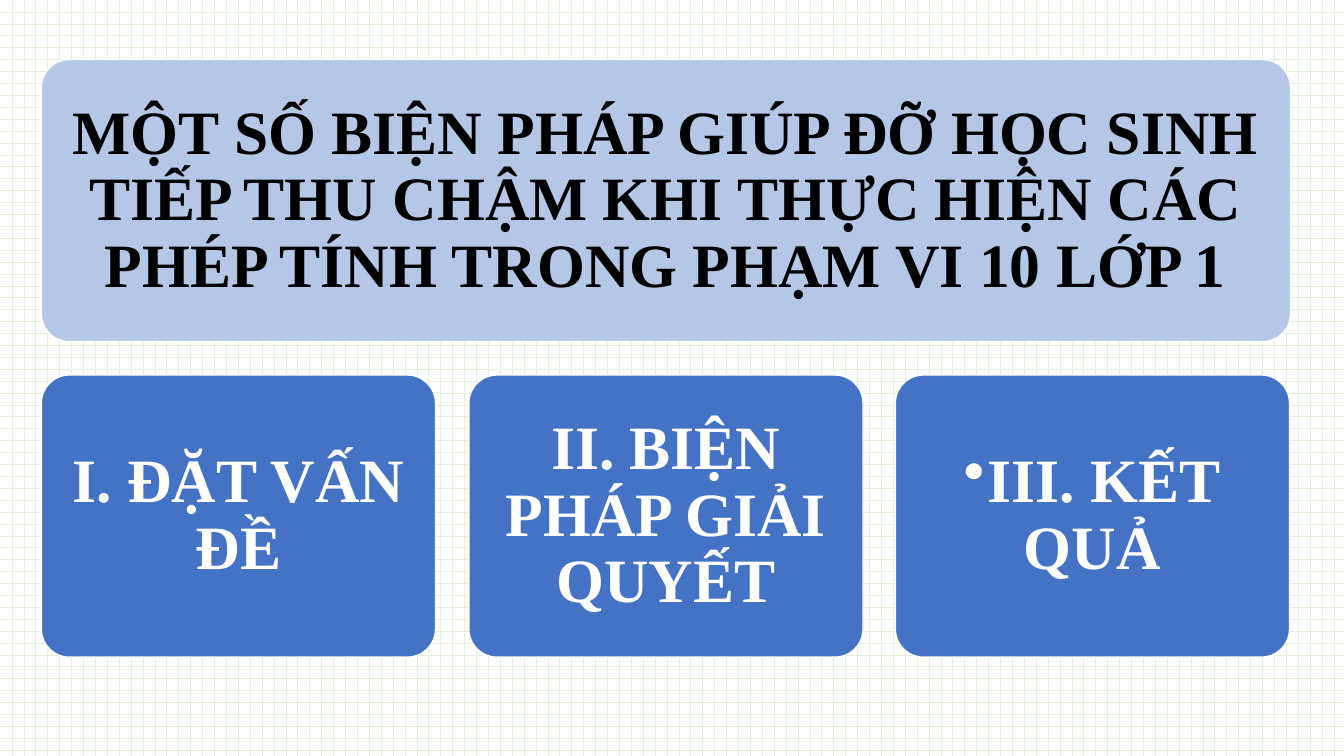
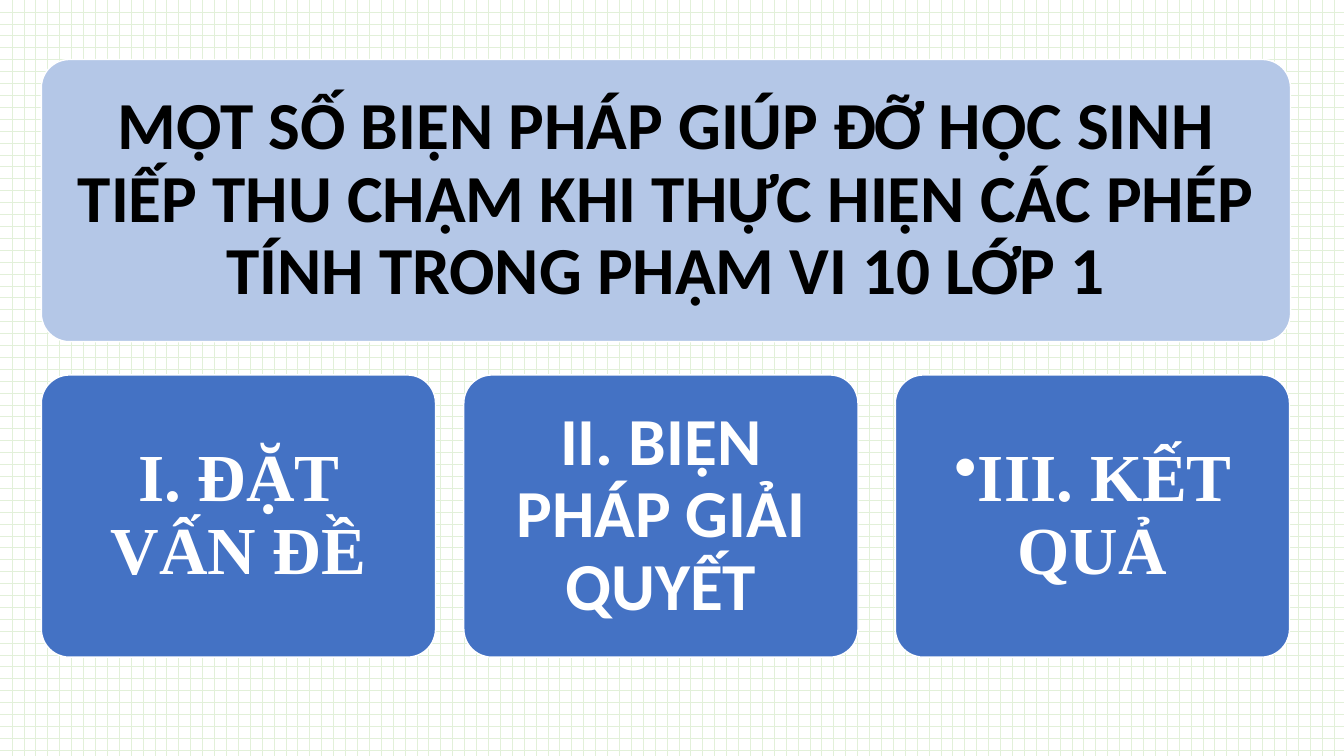
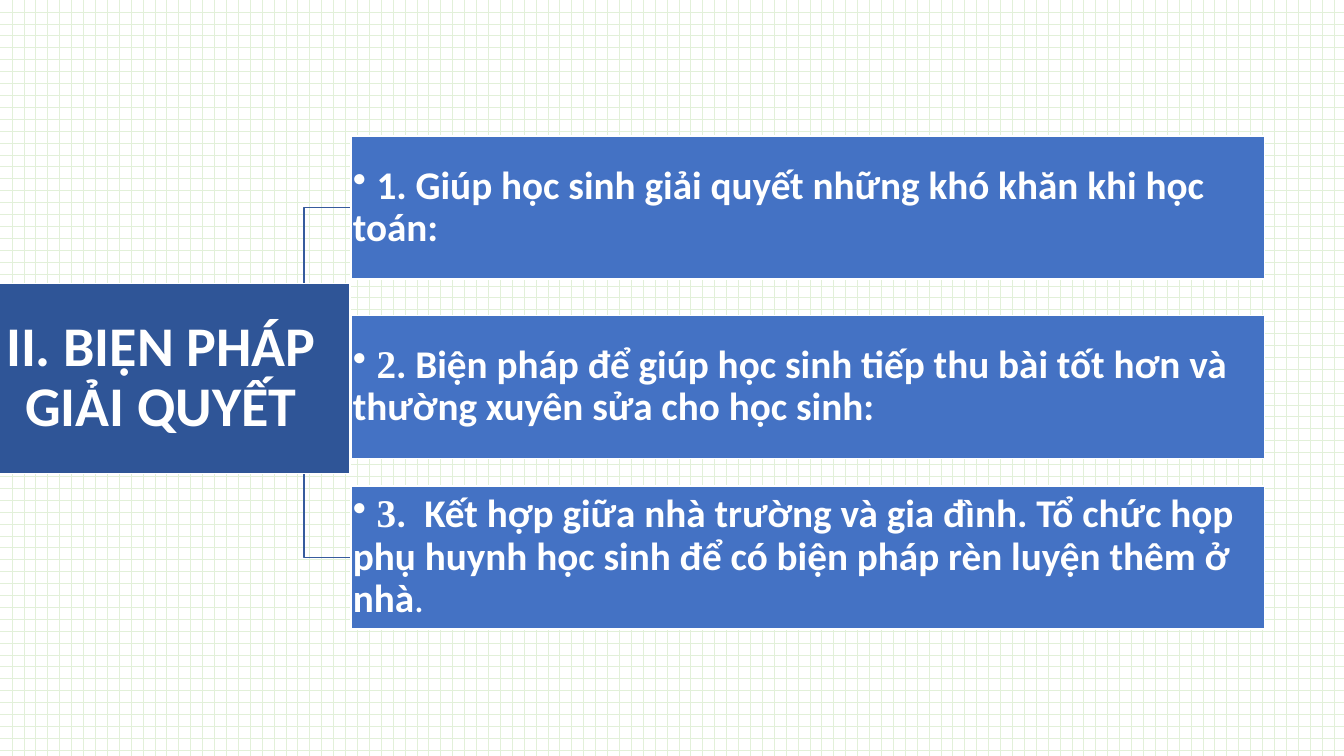
from dataclasses import dataclass, field

from lxml.etree import SubElement
from pptx import Presentation
from pptx.dml.color import RGBColor
from pptx.enum.dml import MSO_PATTERN
from pptx.enum.shapes import MSO_CONNECTOR, MSO_SHAPE
from pptx.enum.text import MSO_ANCHOR, PP_ALIGN
from pptx.oxml.ns import qn
from pptx.slide import Slide
from pptx.util import Emu, Pt

EMU_PER_PX = 9144  # 100 px to the inch


@dataclass(frozen=True)
class Theme:
    white: str = "FFFFFF"
    black: str = "000000"
    grid: str = "E2F0D9"
    pale: str = "B4C7E7"
    blue: str = "4472C4"
    navy: str = "2F5597"
    link: str = "365B9D"
    serif: str = "Times New Roman"
    sans: str = "Calibri"
    menu_size: int = 44
    menu_large: int = 48
    root_size: int = 40
    row_size: int = 28
    line_spacing: float = 0.9
    space_after: int = 35000  # thousandths of a percent


T = Theme()


@dataclass(frozen=True)
class Run:
    text: str
    font: str = T.sans
    bold: bool = True


@dataclass(frozen=True)
class Card:
    x: int
    y: int
    w: int
    h: int
    runs: list[Run]
    size: int
    inset: int
    fill: str = T.blue
    ink: str = T.white
    bullet: bool = False
    rounded: bool = True
    align: PP_ALIGN = PP_ALIGN.CENTER


@dataclass(frozen=True)
class Menu:
    size: int
    inset: int
    middle_x: int
    fonts: list[str] = field(default_factory=list)  # title, then the three parts


def px(n: int) -> Emu:
    return Emu(n * EMU_PER_PX)


def rgb(value: str) -> RGBColor:
    return RGBColor.from_string(value)


def set_all(obj: object, values: dict[str, object]) -> None:
    for name, value in values.items():
        setattr(obj, name, value)


def draw_card(s: Slide, c: Card) -> None:
    kind = MSO_SHAPE.ROUNDED_RECTANGLE if c.rounded else MSO_SHAPE.RECTANGLE
    sp = s.shapes.add_shape(kind, px(c.x), px(c.y), px(c.w), px(c.h))
    if c.rounded:
        sp.adjustments[0] = 0.1
    sp.shadow.inherit = False
    sp.fill.solid()
    sp.fill.fore_color.rgb = rgb(c.fill)
    sp.line.color.rgb = rgb(T.white)
    sp.line.width = Pt(1)

    tf = sp.text_frame
    margins = {f"margin_{side}": px(c.inset) for side in ("left", "top", "right", "bottom")}
    set_all(tf, {"word_wrap": True, "vertical_anchor": MSO_ANCHOR.MIDDLE, **margins})

    # Relative spacing and bullets have no public method
    p = tf.paragraphs[0]
    pPr = p._p.get_or_add_pPr()
    after = SubElement(pPr, qn("a:spcAft"))
    SubElement(after, qn("a:spcPct"), val=str(T.space_after))
    if c.bullet:
        SubElement(pPr, qn("a:buChar"), char="•")
    set_all(p, {"alignment": c.align, "line_spacing": T.line_spacing})

    for run in c.runs:
        r = p.add_run()
        r.text = run.text
        set_all(r.font, {"name": run.font, "size": Pt(c.size), "bold": run.bold})
        r.font.color.rgb = rgb(c.ink)


def draw_link(s: Slide, x1: int, y1: int, x2: int, y2: int) -> None:
    cx = s.shapes.add_connector(MSO_CONNECTOR.ELBOW, px(x1), px(y1), px(x2), px(y2))
    cx.line.color.rgb = rgb(T.link)
    cx.line.width = Pt(1)
    SubElement(cx._element.spPr, qn("a:effectLst"))


# Contents
TITLE = ("MỘT SỐ BIỆN PHÁP GIÚP ĐỠ HỌC SINH TIẾP THU CHẬM "
         "KHI THỰC HIỆN CÁC PHÉP TÍNH TRONG PHẠM VI 10 LỚP 1")
SOLUTIONS = "II. BIỆN PHÁP GIẢI QUYẾT"
PARTS = ["I. ĐẶT VẤN ĐỀ", SOLUTIONS, "III. KẾT QUẢ"]
MENUS = [
    Menu(T.menu_size, 18, 465, [T.serif] * 4),
    Menu(T.menu_large, 20, 460, [T.sans, T.serif, T.sans, T.serif]),
]
MEASURES: list[tuple[int, list[Run]]] = [  # top of the row, text
    (135, [Run(" ", T.serif),
           Run("1. Giúp học sinh giải quyết những khó khăn khi học toán:")]),
    (313, [Run(" 2", T.serif),
           Run(". Biện pháp để giúp học sinh tiếp thu bài tốt hơn và "
               "thường xuyên sửa cho học sinh:")]),
    (482, [Run(" 3", T.serif),
           Run(".  Kết hợp giữa nhà trường và gia đình. Tổ chức họp phụ huynh "
               "học sinh để có biện pháp rèn luyện thêm ở nhà"),
           Run(".", bold=False)]),
]


def draw_menu(s: Slide, m: Menu) -> None:
    title_font, *part_fonts = m.fonts
    draw_card(s, Card(41, 59, 1239, 280, [Run(TITLE, title_font)], m.size, m.inset,
                      fill=T.pale, ink=T.black))
    for x, text, font in zip((41, m.middle_x, 888), PARTS, part_fonts):
        draw_card(s, Card(x, 372, 391, 280, [Run(text, font)], m.size, m.inset,
                          bullet=text == PARTS[-1]))


def draw_measures(s: Slide) -> None:
    row_x, row_h = 348, 142
    # Links go behind the boxes
    for y, _ in MEASURES:
        draw_link(s, 255, 375, row_x, y + row_h // 2)
    draw_card(s, Card(-28, 281, 375, 189, [Run(SOLUTIONS)], T.root_size, 3,
                      fill=T.navy, rounded=False))
    for y, runs in MEASURES:
        draw_card(s, Card(row_x, y, 906, row_h, runs, T.row_size, 2,
                          bullet=True, rounded=False, align=PP_ALIGN.LEFT))


def main() -> None:
    prs = Presentation()
    set_all(prs, {"slide_width": px(1333), "slide_height": px(750)})
    blank = prs.slide_layouts[6]

    # Shared grid background
    fill = prs.slide_master.background.fill
    fill.patterned()
    fill.pattern = MSO_PATTERN.HORIZONTAL_BRICK
    fill.fore_color.rgb = rgb(T.grid)
    fill.back_color.rgb = rgb(T.white)

    for menu in MENUS:
        draw_menu(prs.slides.add_slide(blank), menu)
    draw_measures(prs.slides.add_slide(blank))
    prs.save("out.pptx")


if __name__ == "__main__":
    main()
